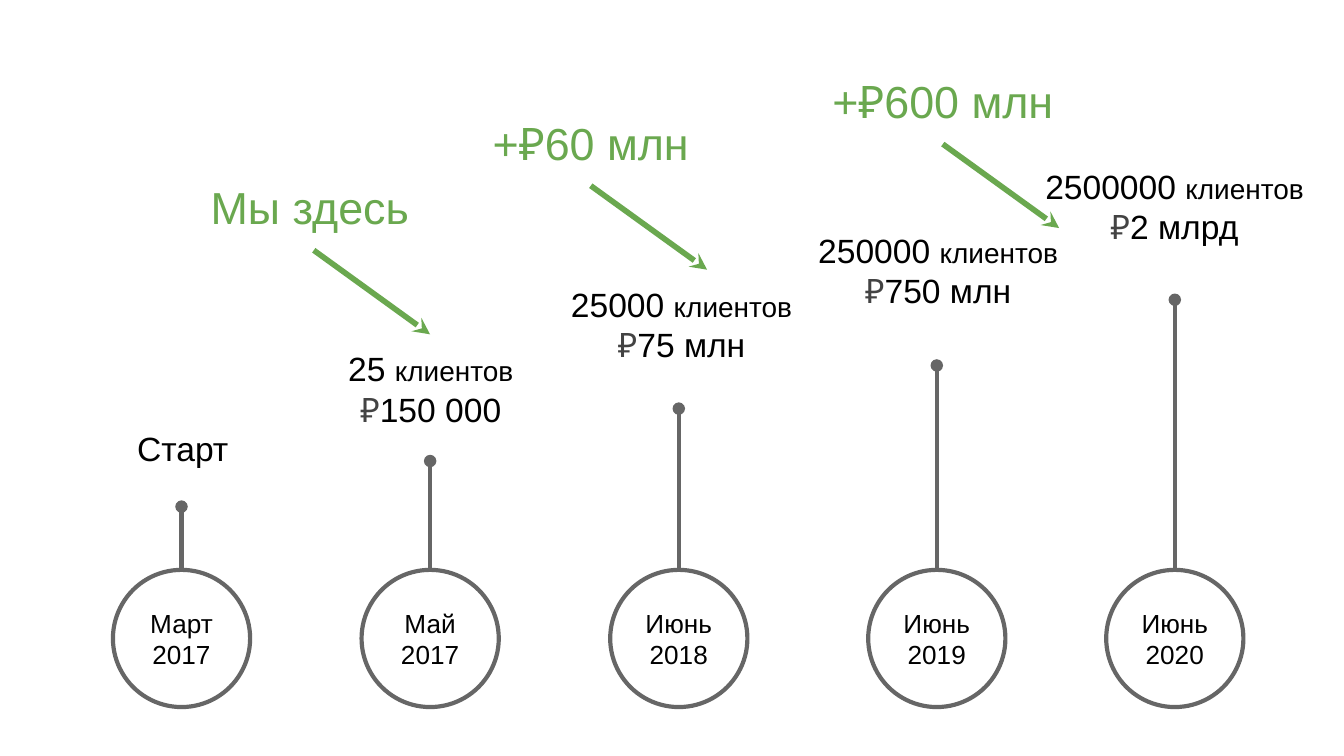
from lxml.etree import SubElement
from pptx import Presentation
from pptx.dml.color import RGBColor
from pptx.enum.shapes import MSO_CONNECTOR, MSO_SHAPE
from pptx.enum.text import MSO_ANCHOR, PP_ALIGN
from pptx.oxml.ns import qn
from pptx.util import Pt

COLORS = {"text": "000000", "ruble": "434343", "axis": "666666", "accent": "6AA84F"}
CIRCLE_TOP, CIRCLE_SIZE = 305.3, 73.5
INSET = 7.2


def format_text(frame, align, size, color):
    """Wrap and inset the frame, then give all its runs one font."""
    frame.word_wrap = True
    frame.margin_left = frame.margin_right = Pt(INSET)
    frame.margin_top = frame.margin_bottom = Pt(INSET)
    for paragraph in frame.paragraphs:
        paragraph.alignment = align
        for run in paragraph.runs:
            run.font.name = "Arial"
            run.font.size = Pt(size)
            run.font.color.rgb = RGBColor.from_string(COLORS[color])


def add_line(start, end, width, color, end_tag, end_type):
    """Add a shadowless straight line with a decorated end."""
    line = slide.shapes.add_connector(
        MSO_CONNECTOR.STRAIGHT, *(Pt(value) for value in (*start, *end)))
    line.line.width = Pt(width)
    line.line.color.rgb = RGBColor.from_string(COLORS[color])
    properties = line._element.spPr
    SubElement(properties.find(qn("a:ln")), qn(end_tag), type=end_type)
    SubElement(properties, qn("a:effectLst"))
    return line


presentation = Presentation()
presentation.slide_width, presentation.slide_height = Pt(720), Pt(405)
slide = presentation.slides.add_slide(presentation.slide_layouts[6])

# Date, circle left, top of the stem
milestones = [
    ("Март 2017", 60.5, 271.4),
    ("Май 2017", 193.7, 247),
    ("Июнь 2018", 326.9, 218.9),
    ("Июнь 2019", 465.1, 195.8),
    ("Июнь 2020", 592.6, 160.6),
]
for date, left, stem_top in milestones:
    circle = slide.shapes.add_shape(
        MSO_SHAPE.OVAL, Pt(left), Pt(CIRCLE_TOP), Pt(CIRCLE_SIZE), Pt(CIRCLE_SIZE))
    circle.shadow.inherit = False
    circle.fill.background()
    circle.line.width = Pt(2.25)
    circle.line.color.rgb = RGBColor.from_string(COLORS["axis"])
    circle.text_frame.text = date
    circle.text_frame.vertical_anchor = MSO_ANCHOR.MIDDLE
    format_text(circle.text_frame, PP_ALIGN.CENTER, 14, "text")

    center = left + CIRCLE_SIZE / 2
    stem = add_line((center, stem_top), (center, CIRCLE_TOP), 2.25, "axis",
                    "a:headEnd", "oval")
    stem.end_connect(circle, 0)

start_label = slide.shapes.add_textbox(Pt(51.8), Pt(221.8), Pt(92.2), Pt(32.4))
start_label.text_frame.text = "Старт"
format_text(start_label.text_frame, PP_ALIGN.CENTER, 18, "text")

# Clients, revenue, left, top, width
results = [
    ("25", "150 000", 172.1, 179.3, 117.4),
    ("25000", "75 млн", 290.2, 144.7, 149.8),
    ("250000", "750 млн", 427.7, 115.9, 149.8),
    ("2500000", "2 млрд", 551.5, 81.4, 155.5),
]
for clients, revenue, left, top, width in results:
    result = slide.shapes.add_textbox(Pt(left), Pt(top), Pt(width), Pt(63.4))
    paragraph = result.text_frame.paragraphs[0]
    paragraph.add_run().text = f"{clients} "
    unit = paragraph.add_run()
    unit.text = "клиентов"
    paragraph.add_line_break()
    ruble = paragraph.add_run()
    ruble.text = "₽"
    paragraph.add_run().text = revenue
    format_text(result.text_frame, PP_ALIGN.CENTER, 18, "text")
    unit.font.size = Pt(15)
    ruble.font.color.rgb = RGBColor.from_string(COLORS["ruble"])

# Text, alignment, left, top, width
notes = [
    ("Мы здесь", PP_ALIGN.LEFT, 105.8, 89.3, 124.6),
    ("+₽60 млн", PP_ALIGN.CENTER, 254.2, 54.7, 124.6),
    ("+₽600 млн", PP_ALIGN.CENTER, 435.6, 32.4, 139),
]
NOTE_HEIGHT = 44.8
for text, align, left, top, width in notes:
    note = slide.shapes.add_textbox(Pt(left), Pt(top), Pt(width), Pt(NOTE_HEIGHT))
    note.text_frame.text = text
    format_text(note.text_frame, align, 24, "accent")

    x, y = left + width / 2, top + NOTE_HEIGHT
    arrow = add_line((x, y), (x + 62.3, y + 45), 3, "accent", "a:tailEnd", "stealth")
    arrow.begin_connect(note, 2)

presentation.save("out.pptx")
